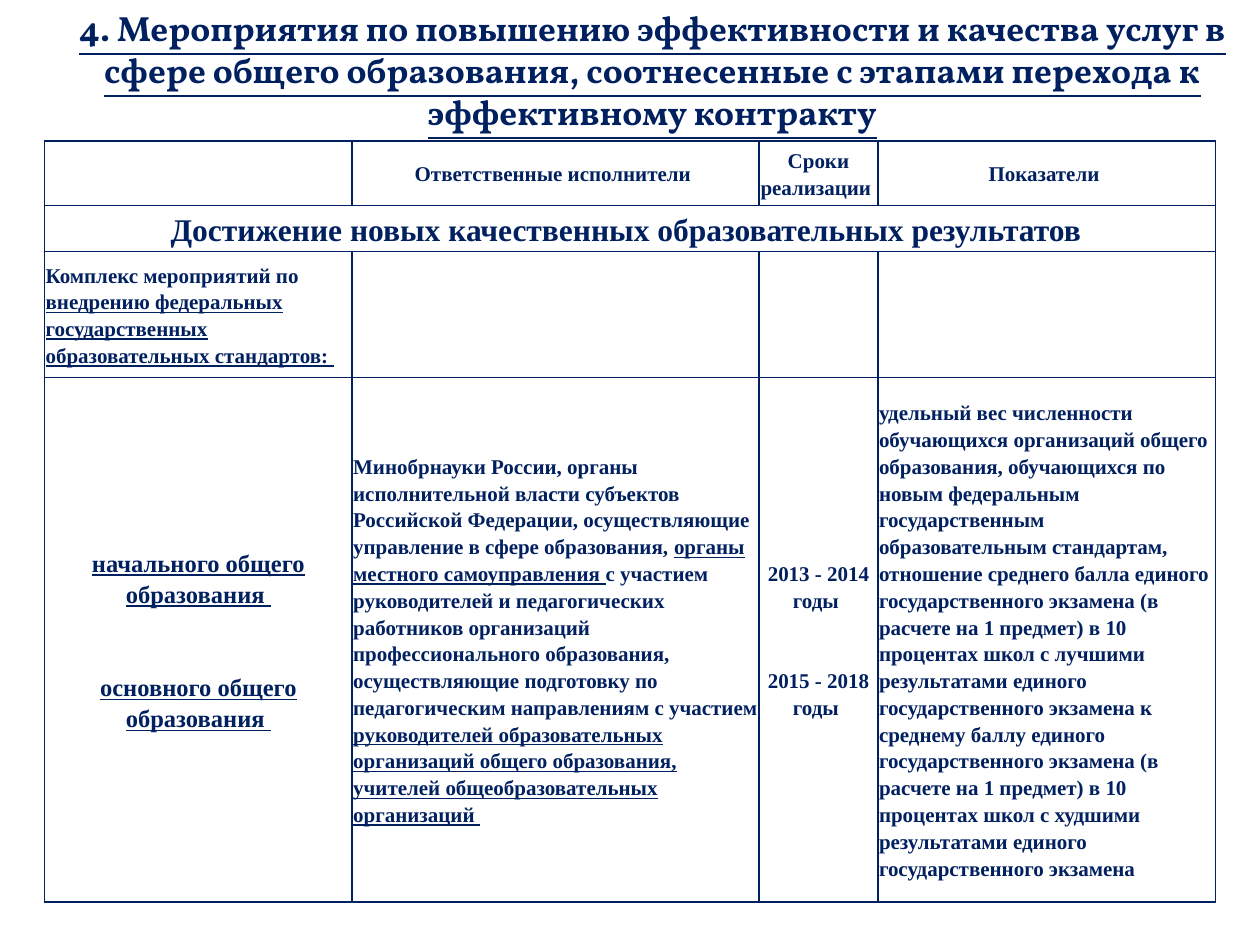
import pptx
import pptx.util
import pptx.dml.color
import pptx.enum.text
from lxml import etree
from pptx.oxml.ns import qn

Cm, Pt = pptx.util.Cm, pptx.util.Pt
ALIGN = pptx.enum.text.PP_ALIGN
MIDDLE = pptx.enum.text.MSO_ANCHOR.MIDDLE

COLORS = {"navy": "002060"}
TITLE_FONT, TABLE_FONT = "Vollkorn", "Times New Roman"

TITLE = ("4. Мероприятия по повышению эффективности и качества услуг в сфере общего "
         "образования, соотнесенные с этапами перехода к эффективному контракту")
COLUMN_WIDTHS = [6.2, 8.2, 2.4, 6.8]
ROW_HEIGHTS = [1.3, 0.93, 2.54, 10.57]

# Each paragraph is a list of (text, underlined) runs.
HEADERS = ["Ответственные исполнители ", "Сроки реализации ", "Показатели "]
SECTION = "Достижение новых качественных образовательных результатов "
MEASURES = [("Комплекс мероприятий по ", False),
            ("внедрению федеральных государственных образовательных стандартов: ", True)]
LEVELS = [[("начального общего образования ", True)],
          [("основного общего образования ", True)]]
EXECUTORS = [
    ("Минобрнауки России, органы исполнительной власти субъектов Российской Федерации, "
     "осуществляющие управление в сфере образования, ", False),
    ("органы местного самоуправления ", True),
    ("с участием руководителей и педагогических работников организаций профессионального "
     "образования, осуществляющие подготовку по педагогическим направлениям с участием ", False),
    ("руководителей образовательных организаций общего образования, "
     "учителей общеобразовательных организаций ", True),
]
PERIODS = [[("2013 - 2014 годы ", False)], [("2015 - 2018 годы ", False)]]
INDICATORS = [
    ("удельный вес численности обучающихся организаций общего образования, обучающихся по "
     "новым федеральным государственным образовательным стандартам, отношение среднего балла "
     "единого государственного экзамена (в расчете на 1 предмет) в 10 процентах школ с лучшими "
     "результатами единого государственного экзамена к среднему баллу единого государственного "
     "экзамена (в расчете на 1 предмет) в 10 процентах школ с худшими результатами единого "
     "государственного экзамена", False),
]


def add_run(paragraph, text, font_name, size, underlined):
    run = paragraph.add_run()
    run.text = text
    font = run.font
    font.name, font.size, font.bold, font.underline = font_name, Pt(size), True, underlined
    font.color.rgb = pptx.dml.color.RGBColor.from_string(COLORS["navy"])


def write_cell(cell, paragraphs, size=12, align=ALIGN.CENTER, gap=0):
    """Fill a cell; gap is the space in points between its paragraphs."""
    frame = cell.text_frame
    for index, runs in enumerate(paragraphs):
        paragraph = frame.add_paragraph() if index else frame.paragraphs[0]
        paragraph.alignment = align
        paragraph.line_spacing = 1.15
        if index:
            paragraph.space_before = Pt(gap)
        for text, underlined in runs:
            add_run(paragraph, text, TABLE_FONT, size, underlined)


def format_cell(cell):
    """Give a cell tight margins, no fill and a thin navy border."""
    cell.margin_left = cell.margin_right = cell.margin_top = cell.margin_bottom = Cm(0.02)
    cell.vertical_anchor = MIDDLE
    cell.fill.background()
    properties = cell._tc.get_or_add_tcPr()
    for position, side in enumerate(("a:lnL", "a:lnR", "a:lnT", "a:lnB")):
        border = etree.Element(qn(side), w=str(Pt(1)))
        fill = etree.SubElement(border, qn("a:solidFill"))
        etree.SubElement(fill, qn("a:srgbClr"), val=COLORS["navy"])
        properties.insert(position, border)


def place_title(slide, left, top, width, height):
    title = slide.shapes.title
    title.left, title.top, title.width, title.height = left, top, width, height
    frame = title.text_frame
    frame.word_wrap = True
    frame.auto_size = pptx.enum.text.MSO_AUTO_SIZE.SHAPE_TO_FIT_TEXT
    frame.vertical_anchor = MIDDLE
    paragraph = frame.paragraphs[0]
    paragraph.alignment = ALIGN.CENTER
    add_run(paragraph, TITLE, TITLE_FONT, 20, True)


def add_measures_table(slide, left, top, width, height):
    table = slide.shapes.add_table(
        len(ROW_HEIGHTS), len(COLUMN_WIDTHS), left, top, width, height).table
    table.first_row = table.horz_banding = False
    for column, share in zip(table.columns, COLUMN_WIDTHS):
        column.width = int(width * share / sum(COLUMN_WIDTHS))
    for row, share in zip(table.rows, ROW_HEIGHTS):
        row.height = int(height * share / sum(ROW_HEIGHTS))
    for cell in table.iter_cells():
        format_cell(cell)

    for column, header in enumerate(HEADERS, start=1):
        write_cell(table.cell(0, column), [[(header, False)]])
    table.cell(1, 0).merge(table.cell(1, len(COLUMN_WIDTHS) - 1))
    write_cell(table.cell(1, 0), [[(SECTION, False)]], size=18)
    write_cell(table.cell(2, 0), [MEASURES], align=ALIGN.LEFT)
    write_cell(table.cell(3, 0), LEVELS, size=14, gap=35.5)
    write_cell(table.cell(3, 1), [EXECUTORS], align=ALIGN.LEFT)
    write_cell(table.cell(3, 2), PERIODS, gap=30.5)
    write_cell(table.cell(3, 3), [INDICATORS], align=ALIGN.LEFT)


def main():
    deck = pptx.Presentation()
    deck.slide_width, deck.slide_height = Cm(25.4), Cm(19.05)
    slide = deck.slides.add_slide(deck.slide_layouts[5])
    place_title(slide, Cm(0.9), Cm(0), Cm(24.5), Cm(2.82))
    add_measures_table(slide, Cm(0.9), Cm(2.84), Cm(23.6), Cm(15.34))
    deck.save("out.pptx")


if __name__ == "__main__":
    main()
